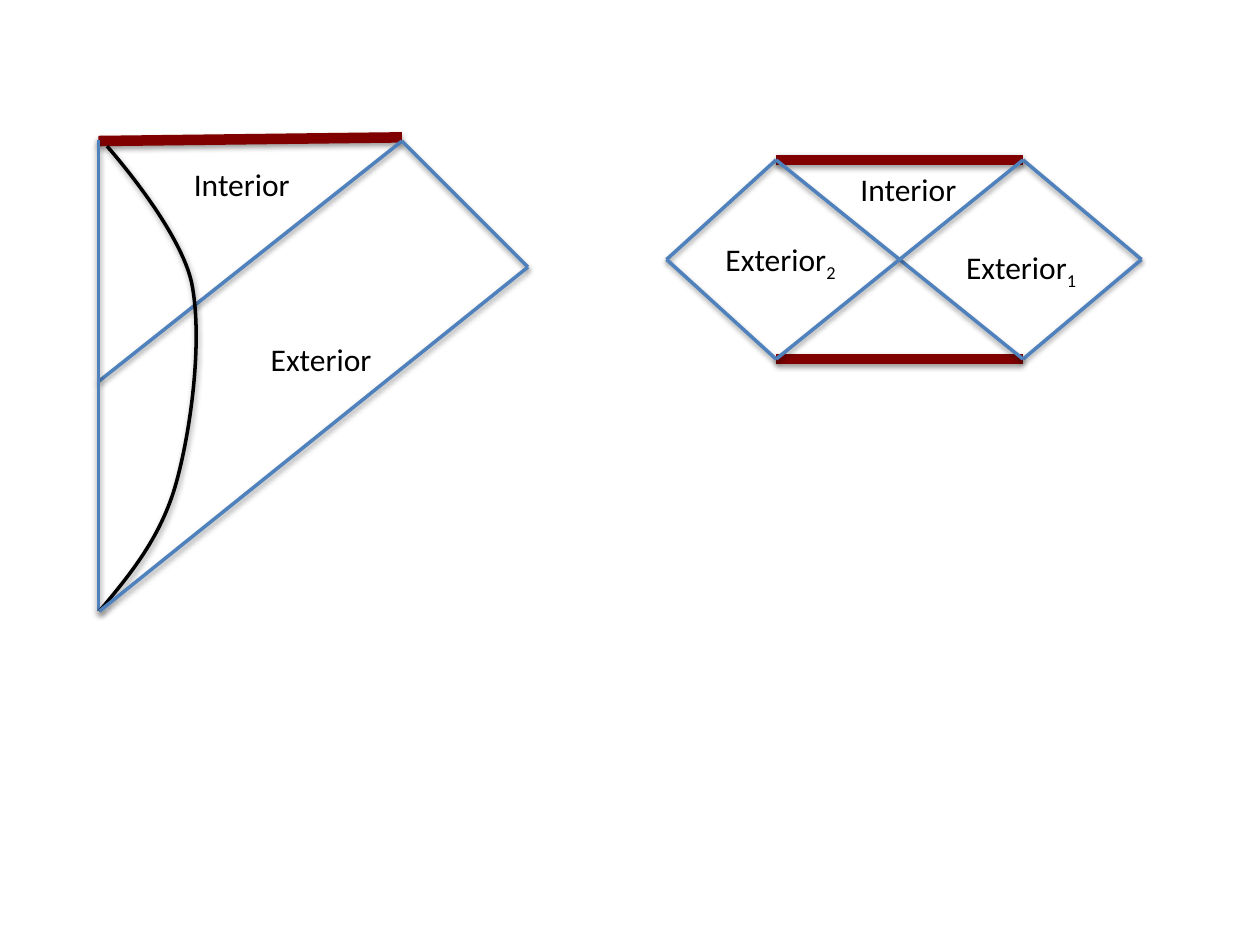
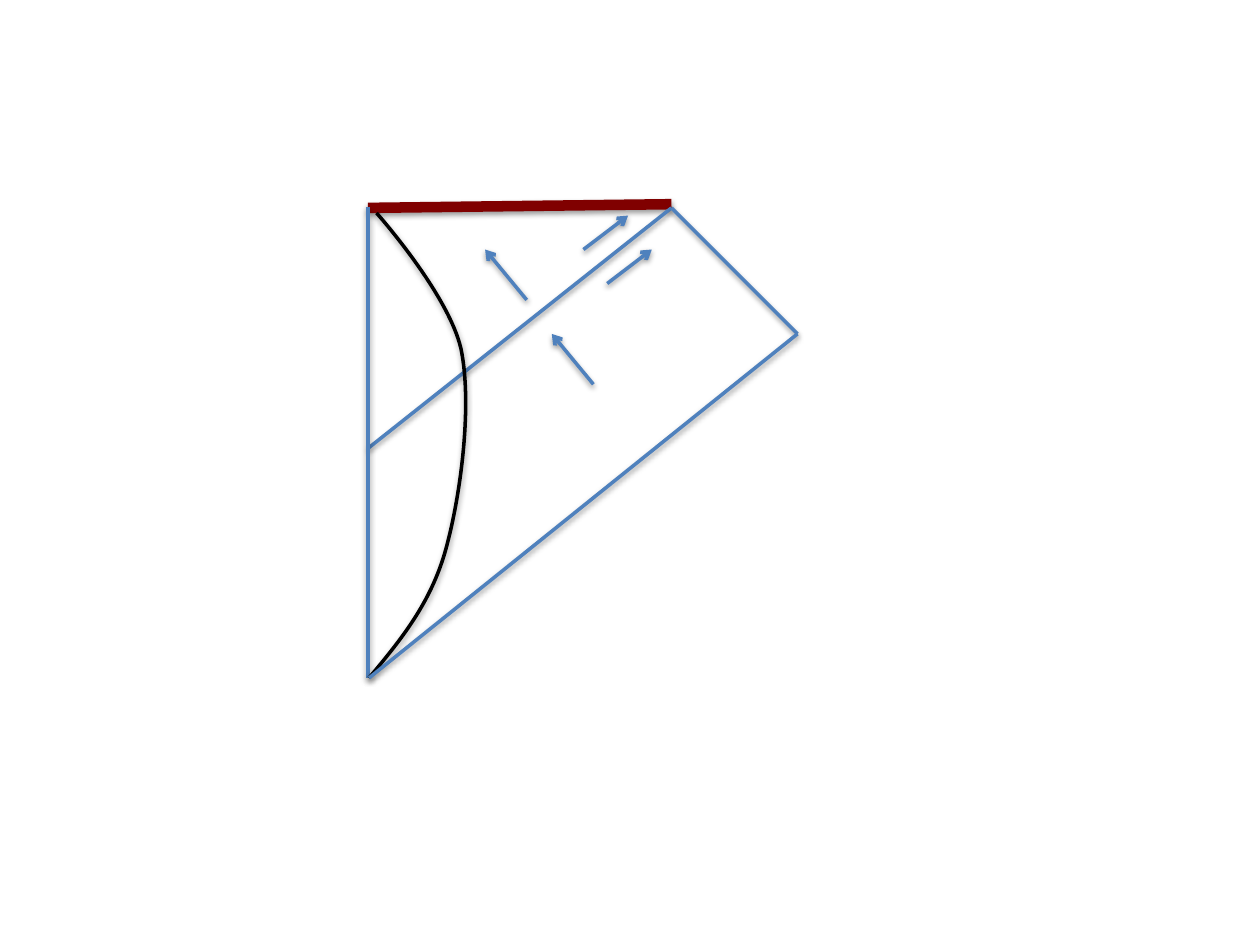
from dataclasses import dataclass
from itertools import pairwise

from lxml.etree import SubElement
from pptx import Presentation
from pptx.dml.color import RGBColor
from pptx.enum.shapes import MSO_CONNECTOR
from pptx.enum.text import MSO_AUTO_SIZE
from pptx.oxml import parse_xml
from pptx.oxml.ns import nsdecls, qn
from pptx.util import Pt


@dataclass(frozen=True)
class Theme:
    font: str = "Calibri"
    text: RGBColor = RGBColor(0, 0, 0)
    null_line: RGBColor = RGBColor(0x4F, 0x81, 0xBD)
    singularity: RGBColor = RGBColor(0x80, 0, 0)
    surface: RGBColor = RGBColor(0, 0, 0)
    size: float = 18
    thin: float = 2
    thick: float = 6
    label_height: float = 28.8


THEME = Theme()

SHADOW = f"""<a:effectLst {nsdecls("a")}>
  <a:outerShdw blurRad="40000" dist="20000" dir="5400000" rotWithShape="0">
    <a:srgbClr val="000000"><a:alpha val="38000"/></a:srgbClr>
  </a:outerShdw>
</a:effectLst>"""

STAR_SURFACE = [
    (0.7, 269.3),
    (18.7, 247.7), (36, 226.8), (44.6, 195.8),
    (53.3, 164.2), (59.8, 113), (53.3, 81.4),
    (46.1, 49.7), (5, 3.6), (5, 3.6),
]
SURFACE_WIDTH = 54.7


def style_outline(shape, color, width):
    shape.line.color.rgb = color
    shape.line.width = Pt(width)
    shape._element.spPr.append(parse_xml(SHADOW))


def add_line(s, start, end, color=THEME.null_line, width=THEME.thin):
    line = s.shapes.add_connector(
        MSO_CONNECTOR.STRAIGHT, *(Pt(v) for v in (*start, *end))
    )
    style_outline(line, color, width)
    return line


def add_singularity(s, start, end):
    add_line(s, start, end, THEME.singularity, THEME.thick)


def add_arrow(s, start, step):
    end = (start[0] + step[0], start[1] + step[1])
    line = add_line(s, start, end)
    SubElement(line.line._get_or_add_ln(), qn("a:tailEnd"), type="arrow")


def add_curve(s, points, width):
    start, *rest = [(Pt(x), Pt(y)) for x, y in points]
    builder = s.shapes.build_freeform(*start)
    builder.add_line_segments(rest, close=False)
    curve = builder.convert_to_shape()
    path = curve._element.find(".//" + qn("a:path"))
    segments = path.findall(qn("a:lnTo"))
    for i in range(0, len(segments), 3):
        bezier = SubElement(path, qn("a:cubicBezTo"))
        for segment in segments[i:i + 3]:
            bezier.append(segment[0])
            path.remove(segment)
    curve.width = Pt(width)
    path.set("w", str(curve.width))
    curve.fill.background()
    style_outline(curve, THEME.surface, THEME.thin)


def add_run(p, text):
    r = p.add_run()
    r.text = text
    r.font.name = THEME.font
    r.font.size = Pt(THEME.size)
    r.font.color.rgb = THEME.text
    return r


def add_label(s, x, y, width, text, subscript=""):
    box = s.shapes.add_textbox(Pt(x), Pt(y), Pt(width), Pt(THEME.label_height))
    tf = box.text_frame
    tf.word_wrap = False
    tf.auto_size = MSO_AUTO_SIZE.SHAPE_TO_FIT_TEXT
    p = tf.paragraphs[0]
    add_run(p, text)
    if subscript:
        r = add_run(p, subscript)
        r.font._element.set("baseline", "-25000")


def add_collapse_diagram(s, x, y):
    def at(dx, dy):
        return x + dx, y + dy

    corner, infinity, base = at(173.5, 0.7), at(245.5, 72.7), at(0.7, 269.3)
    add_singularity(s, at(0, 0.7), at(173.5, -1.4))
    add_line(s, corner, at(0, 138.2))
    add_line(s, at(0, 0), at(0, 269.3))
    add_curve(s, [at(*point) for point in STAR_SURFACE], SURFACE_WIDTH)
    add_line(s, corner, infinity)
    add_line(s, infinity, base)


def add_eternal_diagram(s):
    left, right, top, middle, bottom = 443.5, 584.6, 91.4, 148.3, 205.2
    for y in (top, bottom):
        add_singularity(s, (left, y), (right, y))
    for x, tip in ((left, 380.9), (right, 652.3)):
        for start, end in pairwise([(x, top), (tip, middle), (x, bottom)]):
            add_line(s, start, end)
    add_line(s, (left, top), (right, bottom))
    add_line(s, (left, bottom), (right, top))


def build_regions_slide(s):
    add_collapse_diagram(s, 56.2, 79.9)
    add_eternal_diagram(s)
    add_label(s, 103.7, 90.7, 70.6, "Interior")
    add_label(s, 147.6, 190.8, 72.7, "Exterior")
    add_label(s, 484.6, 93.6, 70.6, "Interior")
    add_label(s, 407.5, 133.9, 79.2, "Exterior", "2")
    add_label(s, 545, 138.2, 79.2, "Exterior", "1")


def build_rays_slide(s):
    add_collapse_diagram(s, 210.2, 118.1)
    ingoing, outgoing = (-23.8, -28.8), (25.5, -19.4)
    for start in ((339.1, 219.6), (301, 171.4)):
        add_arrow(s, start, ingoing)
    for start in ((347, 162), (333.4, 142.6)):
        add_arrow(s, start, outgoing)


def main():
    prs = Presentation()
    prs.slide_width, prs.slide_height = Pt(720), Pt(540)
    blank = prs.slide_layouts.get_by_name("Blank")
    for build in (build_regions_slide, build_rays_slide):
        build(prs.slides.add_slide(blank))
    prs.save("out.pptx")


if __name__ == "__main__":
    main()
